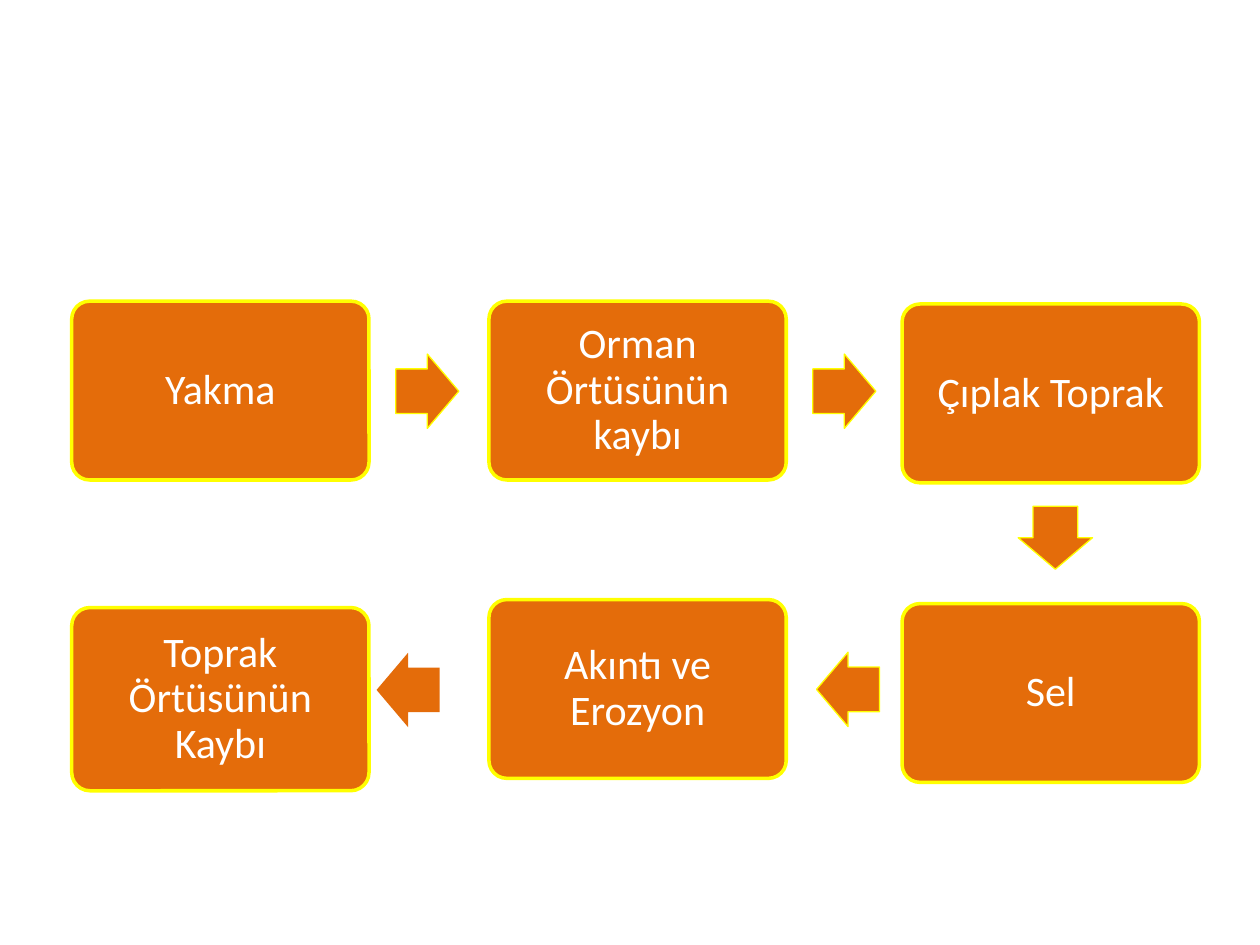
from dataclasses import dataclass

from pptx import Presentation
from pptx.dml.color import RGBColor
from pptx.enum.shapes import MSO_SHAPE
from pptx.enum.text import MSO_ANCHOR, PP_ALIGN
from pptx.util import Pt

COLORS = {"fill": "E46C0A", "outline": "FFFF00", "text": "FFFFFF"}
FONT = "Calibri"
BOX_W, BOX_H = 169.9, 102.2
ARROW_LENGTH, ARROW_SPAN = 36, 42.5
LEFT, MIDDLE, RIGHT = 41, 279.4, 515.5


@dataclass
class Step:
    text: str
    x: float
    y: float
    h: float = BOX_H


@dataclass
class Arrow:
    kind: MSO_SHAPE
    x: float
    y: float
    outlined: bool = True


STEPS = [
    Step("Yakma", LEFT, 172.1),
    Step("Orman Örtüsünün kaybı", MIDDLE, 172.1),
    Step("Çıplak Toprak", RIGHT, 173.7),
    Step("Sel", RIGHT, 344.9),
    Step("Akıntı ve Erozyon", MIDDLE, 342.6),
    Step("Toprak Örtüsünün Kaybı", LEFT, 347.2, 104.7),
]
ARROWS = [
    Arrow(MSO_SHAPE.RIGHT_ARROW, 226.2, 202.3),
    Arrow(MSO_SHAPE.RIGHT_ARROW, 464.5, 202.3),
    Arrow(MSO_SHAPE.DOWN_ARROW, 581.8, 289.3),
    Arrow(MSO_SHAPE.LEFT_ARROW, 466.6, 372.7),
    Arrow(MSO_SHAPE.LEFT_ARROW, 215.2, 373, outlined=False),
]


def color(name: str) -> RGBColor:
    return RGBColor.from_string(COLORS[name])


def add_filled(s, kind: MSO_SHAPE, x: float, y: float, w: float, h: float):
    sp = s.shapes.add_shape(kind, Pt(x), Pt(y), Pt(w), Pt(h))
    sp.shadow.inherit = False
    sp.fill.solid()
    sp.fill.fore_color.rgb = color("fill")
    return sp


def add_step(s, step: Step) -> None:
    sp = add_filled(s, MSO_SHAPE.ROUNDED_RECTANGLE, step.x, step.y, BOX_W, step.h)
    sp.adjustments[0] = 0.1
    sp.line.color.rgb = color("outline")
    sp.line.width = Pt(2)
    tf = sp.text_frame
    tf.word_wrap = True
    tf.vertical_anchor = MSO_ANCHOR.MIDDLE
    tf.margin_left = tf.margin_right = tf.margin_top = tf.margin_bottom = Pt(12.8)
    p = tf.paragraphs[0]
    p.alignment = PP_ALIGN.CENTER
    p.line_spacing = 0.9
    r = p.add_run()
    r.text = step.text
    r.font.name = FONT
    r.font.size = Pt(24)
    r.font.color.rgb = color("text")


def add_arrow(s, arrow: Arrow) -> None:
    w, h = ARROW_LENGTH, ARROW_SPAN
    if arrow.kind == MSO_SHAPE.DOWN_ARROW:
        w, h = h, w
    sp = add_filled(s, arrow.kind, arrow.x, arrow.y, w, h)
    sp.adjustments[0] = 0.6
    sp.adjustments[1] = 0.5
    if arrow.outlined:
        sp.line.color.rgb = color("outline")
        sp.line.width = Pt(0)
    else:
        sp.line.fill.background()


def main() -> None:
    prs = Presentation()
    prs.slide_width, prs.slide_height = Pt(720), Pt(540)
    s = prs.slides.add_slide(prs.slide_layouts[6])
    for step in STEPS:
        add_step(s, step)
    for arrow in ARROWS:
        add_arrow(s, arrow)
    prs.save("out.pptx")


if __name__ == "__main__":
    main()
